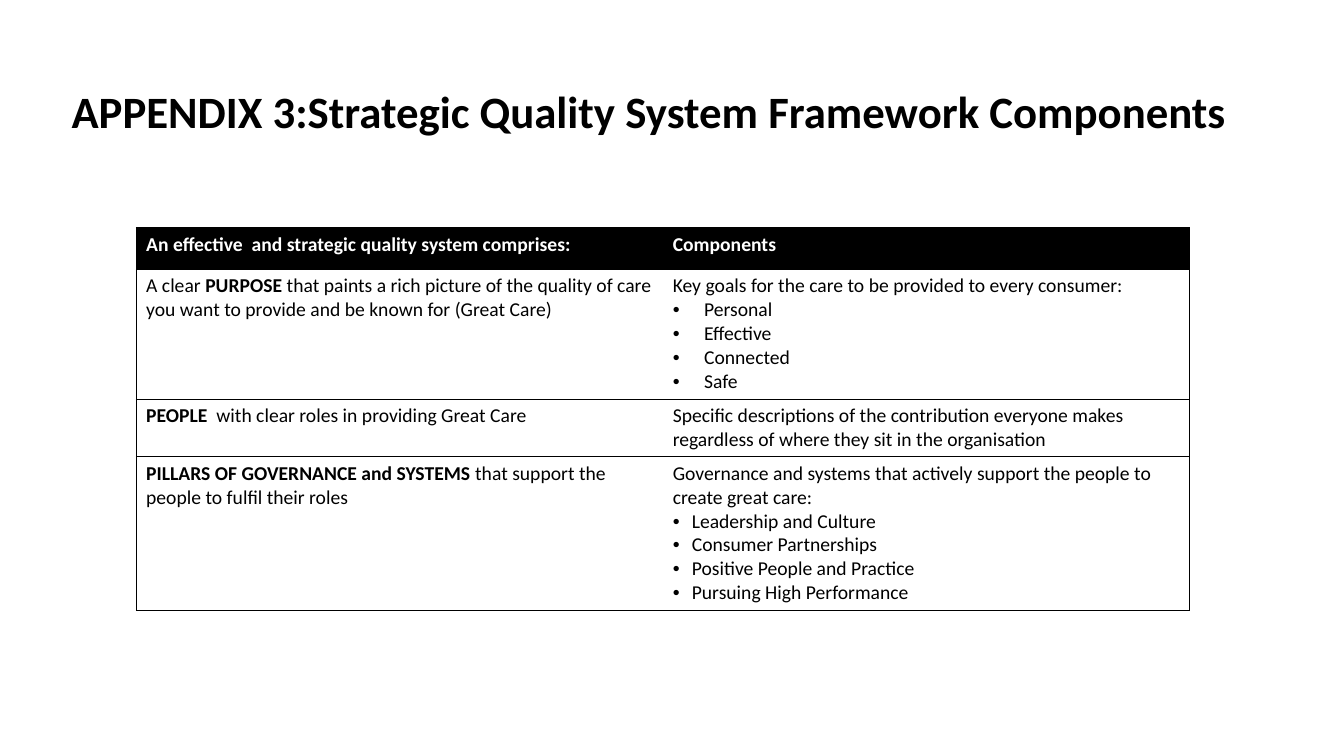
from dataclasses import dataclass

from lxml import etree
from pptx import Presentation
from pptx.dml.color import RGBColor
from pptx.enum.text import MSO_ANCHOR, MSO_AUTO_SIZE, PP_ALIGN
from pptx.oxml.ns import qn
from pptx.slide import Slide
from pptx.table import _Cell
from pptx.text.text import _Paragraph
from pptx.util import Cm, Pt

LEFT = PP_ALIGN.LEFT
MIDDLE = MSO_ANCHOR.MIDDLE
NO_AUTOFIT = MSO_AUTO_SIZE.NONE
TITLE_ONLY_LAYOUT = 5


@dataclass(frozen=True)
class Theme:
    font: str = "Calibri"
    title_size: float = 32
    body_size: float = 14
    border_width: float = 0.5
    black: str = "000000"
    white: str = "FFFFFF"


@dataclass(frozen=True)
class TextRun:
    text: str
    bold: bool = False


@dataclass(frozen=True)
class FrameworkRow:
    height: float
    element: tuple[TextRun, ...]
    component: TextRun
    bullets: tuple[str, ...] = ()
    bullet_indent: float = 0
    header: bool = False


THEME = Theme()
TITLE = "APPENDIX 3:Strategic Quality System Framework Components"
COLUMN_WIDTH = 13.27
ROWS = (
    FrameworkRow(
        1.04,
        (TextRun("An effective  and strategic quality system comprises:", True),),
        TextRun("Components", True),
        header=True,
    ),
    FrameworkRow(
        3.27,
        (
            TextRun("A clear "),
            TextRun("PURPOSE", True),
            TextRun(" that paints a rich picture of the quality of care "
                    "you want to provide and be known for (Great Care)"),
        ),
        TextRun("Key goals for the care to be provided to every consumer:"),
        ("Personal", "Effective", "Connected", "Safe"),
        0.79,
    ),
    FrameworkRow(
        1.45,
        (TextRun("PEOPLE ", True), TextRun(" with clear roles in providing Great Care")),
        TextRun("Specific descriptions of the contribution everyone makes "
                "regardless of where they sit in the organisation"),
    ),
    FrameworkRow(
        3.86,
        (
            TextRun("PILLARS OF GOVERNANCE and SYSTEMS ", True),
            TextRun("that support the people to fulfil their roles"),
        ),
        TextRun("Governance and systems that actively support the people to create great care:"),
        ("Leadership and Culture", "Consumer Partnerships",
         "Positive People and Practice", "Pursuing High Performance"),
        0.48,
    ),
)


def add_run(paragraph: _Paragraph, content: TextRun, size: float, color: str) -> None:
    run = paragraph.add_run()
    run.text = content.text
    font_format = {"name": THEME.font, "size": Pt(size), "bold": content.bold}
    for attribute, value in font_format.items():
        setattr(run.font, attribute, value)
    run.font.color.rgb = RGBColor.from_string(color)


def add_bullet(paragraph: _Paragraph, indent: float) -> None:
    properties = paragraph._p.get_or_add_pPr()
    properties.set("marL", str(Cm(indent)))
    properties.set("indent", str(-Cm(indent)))
    etree.SubElement(properties, qn("a:buFont")).set("typeface", "Arial")
    etree.SubElement(properties, qn("a:buChar")).set("char", "•")


def set_borders(cell: _Cell, visible_sides: str) -> None:
    properties = cell._tc.get_or_add_tcPr()
    for side in "LRTB":
        line = etree.SubElement(properties, qn(f"a:ln{side}"))
        line.set("w", str(Pt(THEME.border_width)))
        if side in visible_sides:
            fill = etree.SubElement(line, qn("a:solidFill"))
            etree.SubElement(fill, qn("a:srgbClr")).set("val", THEME.black)
        else:
            etree.SubElement(line, qn("a:noFill"))


def fill_cell(cell: _Cell, row: FrameworkRow, runs: tuple[TextRun, ...],
              bullets: tuple[str, ...], visible_sides: str) -> None:
    set_borders(cell, visible_sides)
    cell.fill.solid()
    cell.fill.fore_color.rgb = RGBColor.from_string(THEME.black if row.header else THEME.white)
    color = THEME.white if row.header else THEME.black
    for run in runs:
        add_run(cell.text_frame.paragraphs[0], run, THEME.body_size, color)
    for bullet in bullets:
        paragraph = cell.text_frame.add_paragraph()
        add_bullet(paragraph, row.bullet_indent)
        add_run(paragraph, TextRun(bullet), THEME.body_size, color)


def add_title(slide: Slide) -> None:
    title = slide.shapes.title
    placement = {"left": Cm(1.55), "top": Cm(1.02), "width": Cm(31.78), "height": Cm(3.68)}
    for attribute, value in placement.items():
        setattr(title, attribute, value)
    frame_format = {"vertical_anchor": MIDDLE, "word_wrap": True, "auto_size": NO_AUTOFIT}
    for attribute, value in frame_format.items():
        setattr(title.text_frame, attribute, value)
    paragraph = title.text_frame.paragraphs[0]
    for attribute, value in {"alignment": LEFT, "line_spacing": 0.9}.items():
        setattr(paragraph, attribute, value)
    add_run(paragraph, TextRun(TITLE, True), THEME.title_size, THEME.black)


def add_framework_table(slide: Slide) -> None:
    total_height = sum(row.height for row in ROWS)
    table = slide.shapes.add_table(
        len(ROWS), 2, Cm(3.43), Cm(5.74), Cm(2 * COLUMN_WIDTH), Cm(total_height)
    ).table
    for column in table.columns:
        column.width = Cm(COLUMN_WIDTH)
    for index, row in enumerate(ROWS):
        table.rows[index].height = Cm(row.height)
        fill_cell(table.cell(index, 0), row, row.element, (), "LTB")
        fill_cell(table.cell(index, 1), row, (row.component,), row.bullets, "RTB")


def main() -> None:
    presentation = Presentation()
    presentation.slide_width = Cm(33.87)
    presentation.slide_height = Cm(19.05)
    slide = presentation.slides.add_slide(presentation.slide_layouts[TITLE_ONLY_LAYOUT])
    add_title(slide)
    add_framework_table(slide)
    presentation.save("out.pptx")


if __name__ == "__main__":
    main()
